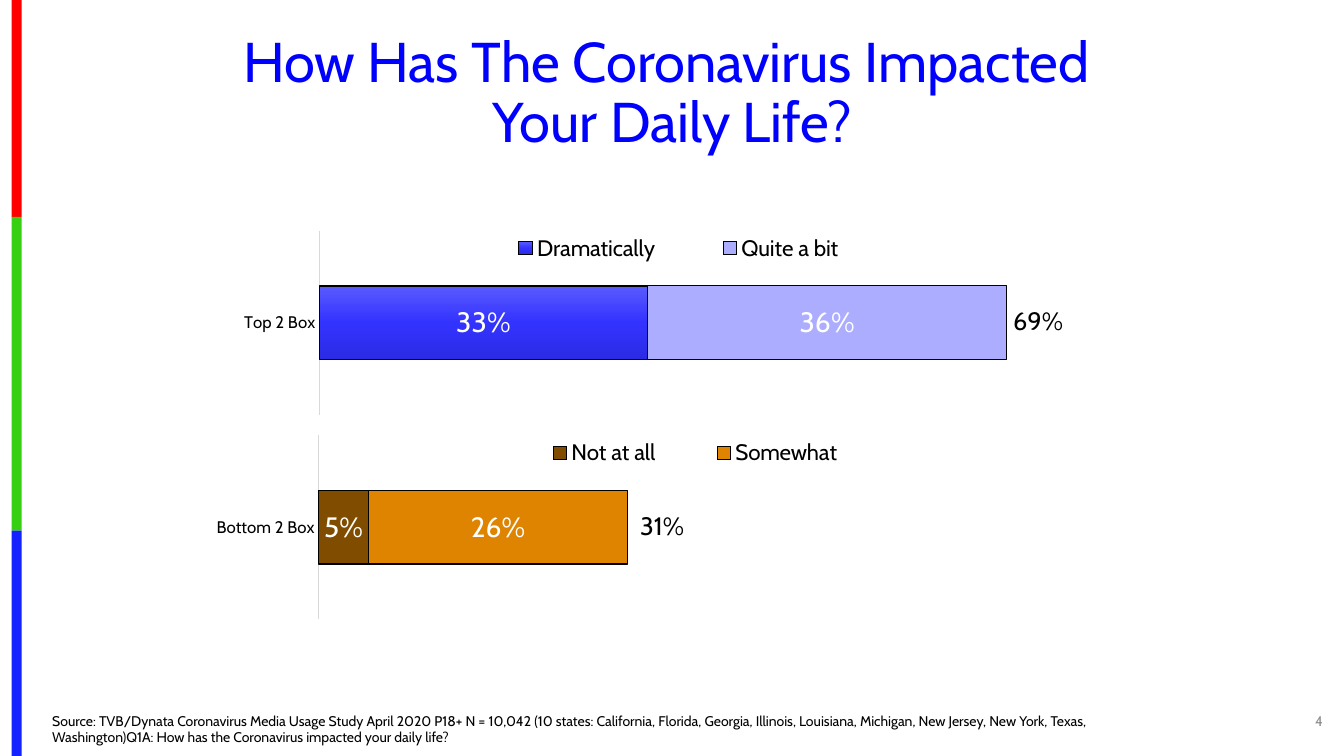
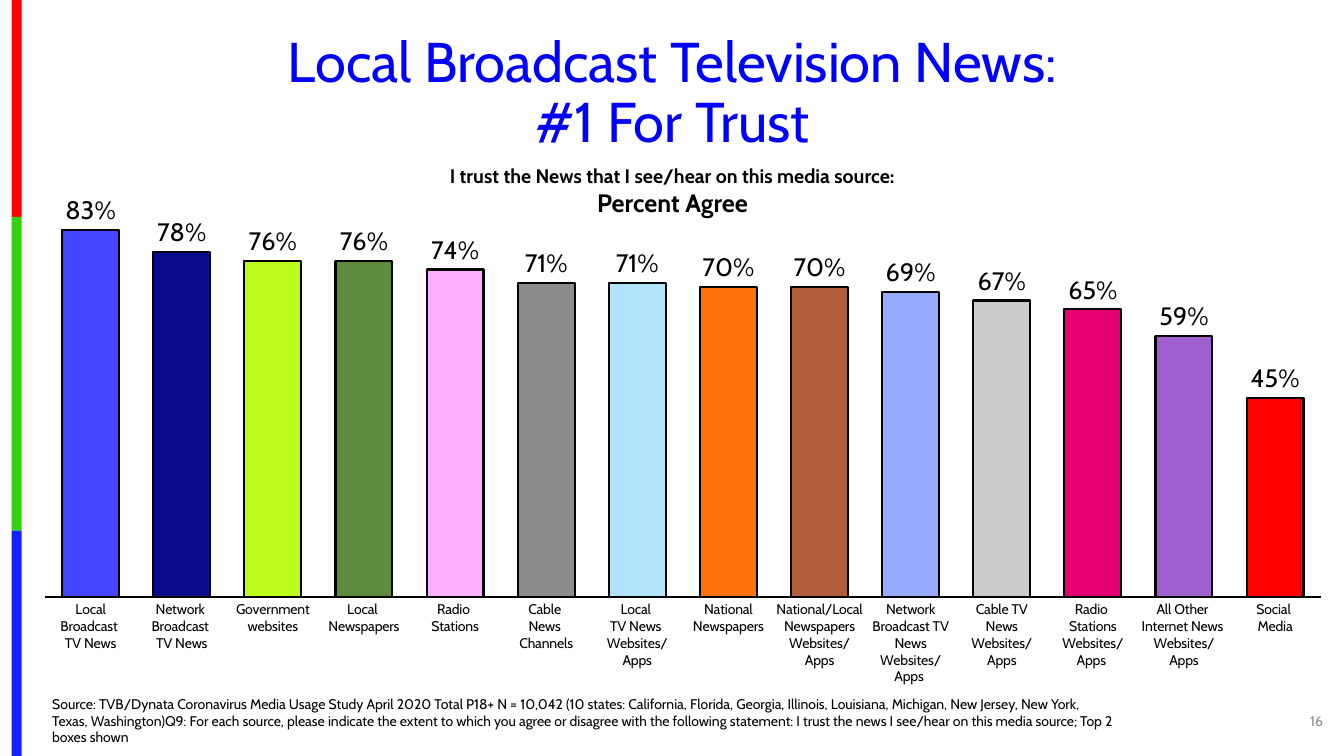
from copy import deepcopy

from lxml.etree import SubElement
from pptx import Presentation
from pptx.chart.data import CategoryChartData
from pptx.dml.color import RGBColor
from pptx.enum.chart import XL_CHART_TYPE, XL_LABEL_POSITION, XL_LEGEND_POSITION, XL_TICK_MARK
from pptx.enum.shapes import MSO_SHAPE
from pptx.enum.text import MSO_ANCHOR, MSO_AUTO_SIZE, PP_ALIGN
from pptx.oxml.ns import qn
from pptx.util import Inches, Pt

FONT = "Cabin"
BLACK = RGBColor(0x00, 0x00, 0x00)
WHITE = RGBColor(0xFF, 0xFF, 0xFF)
TITLE_BLUE = RGBColor(0x00, 0x00, 0xFF)
NUMBER_GRAY = RGBColor(0x8C, 0x8C, 0x8C)
AXIS_GRAY = RGBColor(0xD9, 0xD9, 0xD9)
STRIPE_RED = RGBColor(0xFE, 0x00, 0x00)
STRIPE_GREEN = RGBColor(0x36, 0xCF, 0x12)
STRIPE_BLUE = RGBColor(0x13, 0x22, 0xFE)
BLUE_GRADIENT = (RGBColor(0x5A, 0x5A, 0xFF), RGBColor(0x33, 0x33, 0xFF), RGBColor(0x2B, 0x2B, 0xE5))
LAVENDER = RGBColor(0xAD, 0xAD, 0xFF)
BROWN = RGBColor(0x80, 0x4C, 0x00)
AMBER = RGBColor(0xDE, 0x84, 0x00)

# Heights are percent of the slide, from top to bottom
STRIPES = ((STRIPE_RED, 28.7), (STRIPE_GREEN, 41.5), (STRIPE_BLUE, 29.8))

TRUST = (
    ("Local Broadcast \nTV News", 0.83, RGBColor(0x44, 0x44, 0xFF)),
    ("Network \nBroadcast \nTV News", 0.78, RGBColor(0x0A, 0x0A, 0x8D)),
    ("Government websites", 0.76, RGBColor(0xBC, 0xFC, 0x1A)),
    ("Local \nNewspapers", 0.76, RGBColor(0x5C, 0x8C, 0x3C)),
    ("Radio \nStations", 0.74, RGBColor(0xFF, 0xAF, 0xFF)),
    ("Cable \nNews \nChannels", 0.71, RGBColor(0x8B, 0x8B, 0x8B)),
    ("Local \nTV News \nWebsites/Apps", 0.71, RGBColor(0xB2, 0xE5, 0xFC)),
    ("National Newspapers", 0.70, RGBColor(0xFF, 0x73, 0x0A)),
    ("National/Local Newspapers Websites/\nApps", 0.70, RGBColor(0xB2, 0x5E, 0x3C)),
    ("Network Broadcast TV News Websites/Apps ", 0.69, RGBColor(0x95, 0xA9, 0xFD)),
    ("Cable TV News Websites/\nApps", 0.67, RGBColor(0xCB, 0xCB, 0xCB)),
    ("Radio \nStations Websites/\nApps ", 0.65, RGBColor(0xE5, 0x00, 0x73)),
    ("All Other \nInternet News \nWebsites/Apps", 0.59, RGBColor(0x9F, 0x5F, 0xCF)),
    ("Social \nMedia", 0.45, RGBColor(0xFF, 0x00, 0x00)),
)


def style_font(font, size, color=BLACK, bold=None):
    font.name, font.size, font.bold = FONT, Pt(size), bold
    font.color.rgb = color


def write(para, text, size=10, color=BLACK, bold=None, align=None, spacing=None):
    """Fill a paragraph; a vertical tab in the text becomes a line break."""
    para.text = text
    para.alignment = align
    para.line_spacing = spacing
    for span in para.runs:
        style_font(span.font, size, color, bold)
    for line_break in para._p.findall(qn("a:br")):
        line_break.append(deepcopy(para.runs[0]._r.rPr))


def set_layout(parent, index, x, y, w, h, inner=False):
    """Place a plot area or legend by shares of the chart."""
    for old in parent.findall(qn("c:layout")):
        parent.remove(old)
    layout = parent.makeelement(qn("c:layout"))
    parent.insert(index, layout)
    manual = SubElement(layout, qn("c:manualLayout"))
    settings = [("layoutTarget", "inner")] if inner else []
    settings += [("xMode", "edge"), ("yMode", "edge"), ("x", x), ("y", y), ("w", w), ("h", h)]
    for name, value in settings:
        SubElement(manual, qn(f"c:{name}")).set("val", str(value))


def set_gradient(series, colors):
    """Fill a series from top to bottom with evenly spaced colors."""
    fill = series.format.fill
    fill.gradient()
    fill.gradient_angle = 270
    stop_list = next(series._element.iter(qn("a:gsLst")))
    while len(stop_list) < len(colors):
        stop_list.append(deepcopy(stop_list[0]))
    for index, (stop, color) in enumerate(zip(fill.gradient_stops, colors)):
        stop.color.rgb = color
        stop.position = index / (len(colors) - 1)


class Deck:
    """Holds the shared style and current page; places are percent of the slide."""

    def __init__(self):
        self.file = Presentation()
        self.file.slide_width, self.file.slide_height = Inches(13.33), Inches(7.5)
        self.page = None

    def place(self, x, y, w, h):
        wide, high = self.file.slide_width / 100, self.file.slide_height / 100
        return int(x * wide), int(y * high), int(w * wide), int(h * high)

    def add_page(self, title, source, number):
        self.page = self.file.slides.add_slide(self.file.slide_layouts[5])
        self.stripes()
        self.title(title)
        self.text((3.15, 91.3, 80.5, 8), source, anchor=MSO_ANCHOR.BOTTOM)
        self.text((94.67, 92.67, 4.5, 5.33), number, anchor=MSO_ANCHOR.MIDDLE,
                  color=NUMBER_GRAY, align=PP_ALIGN.RIGHT)

    def stripes(self):
        top = 0
        for color, height in STRIPES:
            stripe = self.page.shapes.add_shape(
                MSO_SHAPE.RECTANGLE, *self.place(0.86, top, 0.75, height))
            stripe.shadow.inherit = False
            stripe.fill.solid()
            stripe.fill.fore_color.rgb = color
            stripe.line.fill.background()
            top += height

    def title(self, text):
        box = self.page.shapes.title
        box.left, box.top, box.width, box.height = self.place(3.15, 3.73, 93.77, 17.47)
        frame = box.text_frame
        frame.auto_size = MSO_AUTO_SIZE.NONE
        frame.vertical_anchor = MSO_ANCHOR.MIDDLE
        write(frame.paragraphs[0], text, size=40, color=TITLE_BLUE,
              align=PP_ALIGN.CENTER, spacing=0.9)

    def text(self, place, text, anchor=MSO_ANCHOR.TOP, **style):
        frame = self.page.shapes.add_textbox(*self.place(*place)).text_frame
        frame.word_wrap = True
        frame.vertical_anchor = anchor
        write(frame.paragraphs[0], text, **style)
        return frame

    def chart(self, kind, place, plot_place, categories, series, top_value, gap,
              axis_size, axis_color, axis_width, label_size, label_color, label_position):
        data = CategoryChartData(number_format="0%")
        data.categories = categories
        for name, values in series:
            data.add_series(name, values)
        chart = self.page.shapes.add_chart(kind, *self.place(*place), data).chart
        chart.has_title = chart.has_legend = False
        style_font(chart.font, 10)
        set_layout(chart._chartSpace.chart.plotArea, 0, *plot_place, inner=True)

        value_axis = chart.value_axis
        value_axis.minimum_scale, value_axis.maximum_scale = 0, top_value
        value_axis.has_major_gridlines = value_axis.visible = False
        axis = chart.category_axis
        axis.major_tick_mark = axis.minor_tick_mark = XL_TICK_MARK.NONE
        style_font(axis.tick_labels.font, axis_size)
        axis.format.line.color.rgb = axis_color
        axis.format.line.width = Pt(axis_width)

        plot = chart.plots[0]
        plot.gap_width = gap
        plot.vary_by_categories = False
        plot.has_data_labels = True
        labels = plot.data_labels
        labels.show_value = True
        labels.number_format, labels.number_format_is_linked = "0%", False
        labels.position = label_position
        style_font(labels.font, label_size, label_color)
        return chart

    def stacked_bar(self, place, plot_place, legend_place, category, parts):
        """Draw one bar; each part is a name, value, fill and outline width."""
        chart = self.chart(
            XL_CHART_TYPE.BAR_STACKED, place, plot_place, [category],
            [(name, [value]) for name, value, _, _ in parts], top_value=0.8, gap=150,
            axis_size=12, axis_color=AXIS_GRAY, axis_width=0.75,
            label_size=20, label_color=WHITE, label_position=XL_LABEL_POSITION.CENTER)
        plot = chart.plots[0]
        plot.overlap = 100
        for series, (_, _, fill, width) in zip(plot.series, parts):
            if isinstance(fill, RGBColor):
                series.format.fill.solid()
                series.format.fill.fore_color.rgb = fill
            else:
                set_gradient(series, fill)
            series.format.line.color.rgb = BLACK
            series.format.line.width = Pt(width)
        chart.has_legend = True
        legend = chart.legend
        legend.position = XL_LEGEND_POSITION.BOTTOM
        legend.include_in_layout = False
        style_font(legend.font, 16)
        set_layout(legend._element, 1, *legend_place)

    def columns(self, place, plot_place, rows):
        """Draw one column for each row of category, value and color."""
        categories, values, colors = zip(*rows)
        chart = self.chart(
            XL_CHART_TYPE.COLUMN_CLUSTERED, place, plot_place, categories,
            [("Series 1", values)], top_value=0.9, gap=60,
            axis_size=10, axis_color=BLACK, axis_width=1.5,
            label_size=18, label_color=BLACK, label_position=XL_LABEL_POSITION.OUTSIDE_END)
        series = chart.plots[0].series[0]
        series.invert_if_negative = False
        for index, color in enumerate(colors):
            column = series.points[index].format
            column.fill.solid()
            column.fill.fore_color.rgb = color
            column.line.color.rgb = BLACK
            column.line.width = Pt(1.5)


def impact_page(deck):
    deck.add_page(
        "How Has The Coronavirus Impacted \vYour Daily Life?",
        "Source: TVB/Dynata Coronavirus Media Usage Study April 2020 P18+ N = 10,042 "
        "(10 states: California, Florida, Georgia, Illinois, Louisiana, Michigan, New Jersey, "
        "New York, Texas, Washington)Q1A: How has the Coronavirus impacted your daily life?",
        "4")
    deck.stacked_bar(
        (2.93, 27.07, 82, 28.8), (0.254, 0.12, 0.723, 0.845), (0.38, 0.13, 0.4, 0.14),
        "Top 2 Box",
        [("Dramatically", 0.33, BLUE_GRADIENT, 1), ("Quite a bit", 0.36, LAVENDER, 0.75)])
    deck.stacked_bar(
        (3.83, 54.13, 81.17, 28.8), (0.245, 0.12, 0.731, 0.845), (0.41, 0.13, 0.36, 0.14),
        "Bottom 2 Box",
        [("Not at all", 0.05, BROWN, 0.75), ("Somewhat", 0.26, AMBER, 0.75)])
    for x, y, total in ((74.64, 39.73, "69%"), (46.89, 66.8, "31%")):
        deck.text((x, y, 9, 5.33), total, size=18)


def trust_page(deck):
    deck.add_page(
        "Local Broadcast Television News:\v#1 For Trust",
        "Source: TVB/Dynata Coronavirus Media Usage Study April 2020 Total P18+ N = 10,042 "
        "(10 states: California, Florida, Georgia, Illinois, Louisiana, Michigan, New Jersey, "
        "New York, Texas, Washington)Q9: For each source, please indicate the extent to which "
        "you agree or disagree with the following statement: I trust the news I see/hear on "
        "this media source; Top 2 boxes shown",
        "16")
    deck.columns((2.48, 24.13, 96.85, 67.07), (0.009, 0.032, 0.98, 0.786), TRUST)
    frame = deck.text((14.1, 21.07, 71.87, 11.73),
                      "I trust the News that I see/hear on this media source:",
                      size=14, bold=True, align=PP_ALIGN.CENTER)
    write(frame.add_paragraph(), "Percent Agree", size=18, bold=True, align=PP_ALIGN.CENTER)


def main():
    deck = Deck()
    impact_page(deck)
    trust_page(deck)
    deck.file.save("out.pptx")


if __name__ == "__main__":
    main()
